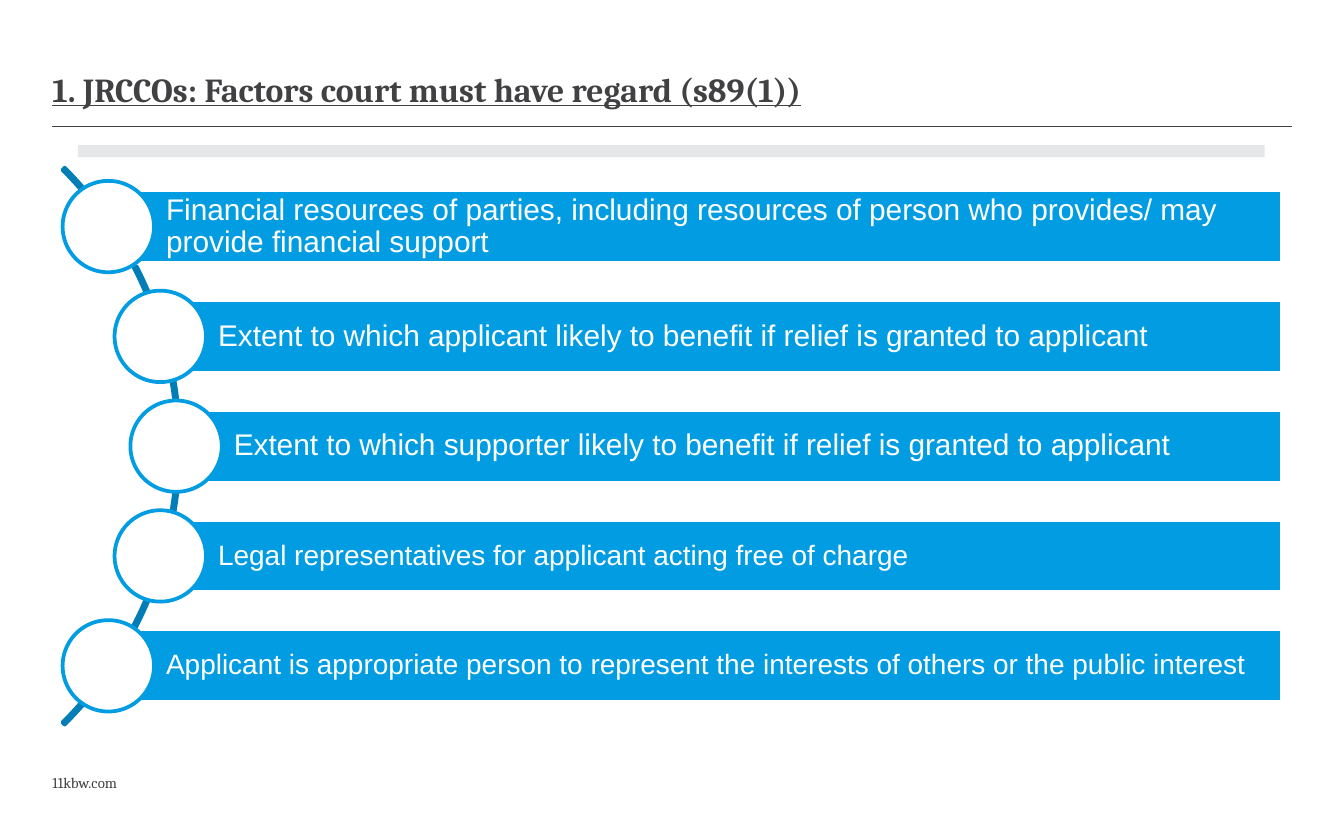
from dataclasses import dataclass
from math import sqrt

from pptx import Presentation
from pptx.dml.color import RGBColor
from pptx.enum.shapes import MSO_SHAPE
from pptx.enum.text import MSO_ANCHOR, PP_ALIGN
from pptx.util import Inches, Pt

# Content: factor text and its type size
TITLE = "1. JRCCOs: Factors court must have regard (s89(1))"
FOOTER = "11kbw.com"
FACTORS = [
    ("Financial resources of parties, including resources of person who provides/ may "
     "provide financial support", 16),
    ("Extent to which applicant likely to benefit if relief is granted to applicant", 16),
    ("Extent to which supporter likely to benefit if relief is granted to applicant", 16),
    ("Legal representatives for applicant acting free of charge", 15),
    ("Applicant is appropriate person to represent the interests of others or the public interest", 15),
]


@dataclass(frozen=True)
class Theme:
    ink: str = "414042"
    band: str = "E6E7E8"
    bar: str = "029CE2"
    arc: str = "027DB5"
    white: str = "FFFFFF"
    heading_font: str = "Cambria"
    body_font: str = "Arial"
    title_size: float = 18
    footer_size: float = 8
    outline: float = 2


THEME = Theme()

# Layout in inches
WIDTH, HEIGHT = 10, 6.25
MARGIN = 0.39
CENTRE_X, CENTRE_Y = -1.59, 3.32
ARC_RADIUS, NODE_RADIUS = 2.93, 2.9
ROW_PITCH, BAR_HEIGHT, BAR_RIGHT = 0.817, 0.54, 9.54
CIRCLE = 0.68


def colour(value):
    return RGBColor.from_string(value)


def add_shape(slide, kind, box, fill=None, line=None, weight=THEME.outline):
    shape = slide.shapes.add_shape(kind, *map(Inches, box))
    shape.shadow.inherit = False
    if fill:
        shape.fill.solid()
        shape.fill.fore_color.rgb = colour(fill)
    else:
        shape.fill.background()
    if line:
        shape.line.color.rgb = colour(line)
        shape.line.width = Pt(weight)
    else:
        shape.line.fill.background()
    return shape


def write(shape, text, *, font, size, color, bold=False, underline=False,
          insets=(0, 0, 0, 0), anchor=MSO_ANCHOR.TOP, spacing=None):
    frame = shape.text_frame
    frame.word_wrap = True
    frame.vertical_anchor = anchor
    (frame.margin_left, frame.margin_top,
     frame.margin_right, frame.margin_bottom) = map(Inches, insets)
    paragraph = frame.paragraphs[0]
    paragraph.alignment = PP_ALIGN.LEFT
    paragraph.space_before = Pt(0)
    paragraph.line_spacing = spacing
    run = paragraph.add_run()
    run.text = text
    run.font.name, run.font.size = font, Pt(size)
    run.font.bold, run.font.underline = bold, underline
    run.font.color.rgb = colour(color)


def add_header(slide):
    rule = slide.shapes.add_connector(
        1, Inches(MARGIN), Inches(0.94), Inches(WIDTH - MARGIN), Inches(0.94))
    rule.line.color.rgb = colour(THEME.ink)
    rule.line.width = Pt(0.75)
    properties = rule._element.spPr
    properties.append(properties.makeelement(
        "{http://schemas.openxmlformats.org/drawingml/2006/main}effectLst", {}))
    add_shape(slide, MSO_SHAPE.RECTANGLE, (0.58, 1.08, 8.83, 0.09), THEME.band)

    title = slide.shapes.title
    title.left, title.top, title.width, title.height = map(Inches, (MARGIN, 0.51, 6.79, 0.35))
    write(title, TITLE, font=THEME.heading_font, size=THEME.title_size,
          color=THEME.ink, bold=True, underline=True)


def add_factors(slide):
    # Arc from 315 to 45 degrees that carries the circles
    arc = add_shape(slide, MSO_SHAPE.BLOCK_ARC,
                    (CENTRE_X - ARC_RADIUS, CENTRE_Y - ARC_RADIUS,
                     2 * ARC_RADIUS, 2 * ARC_RADIUS), line=THEME.arc)
    for index, value in enumerate((189, 27, 0.004)):
        arc.adjustments[index] = value

    # Each bar starts at the centre of its circle
    for row, (text, size) in enumerate(FACTORS):
        offset = (row - (len(FACTORS) - 1) / 2) * ROW_PITCH
        x = CENTRE_X + sqrt(NODE_RADIUS ** 2 - offset ** 2)
        y = CENTRE_Y + offset
        bar = add_shape(slide, MSO_SHAPE.RECTANGLE,
                        (x, y - BAR_HEIGHT / 2, BAR_RIGHT - x, BAR_HEIGHT),
                        THEME.bar, THEME.white)
        write(bar, text, font=THEME.body_font, size=size, color=THEME.white,
              insets=(0.43, 0.04, 0.04, 0.04), anchor=MSO_ANCHOR.MIDDLE, spacing=0.9)
        add_shape(slide, MSO_SHAPE.OVAL,
                  (x - CIRCLE / 2, y - CIRCLE / 2, CIRCLE, CIRCLE),
                  THEME.white, THEME.bar)


def add_footer(slide):
    footer = slide.shapes.add_textbox(*map(Inches, (MARGIN, 5.76, 4.41, 0.14)))
    write(footer, FOOTER, font=THEME.heading_font, size=THEME.footer_size, color=THEME.ink)


def main():
    presentation = Presentation()
    presentation.slide_width, presentation.slide_height = Inches(WIDTH), Inches(HEIGHT)
    slide = presentation.slides.add_slide(presentation.slide_layouts[5])
    add_header(slide)
    add_factors(slide)
    add_footer(slide)
    presentation.save("out.pptx")


if __name__ == "__main__":
    main()
